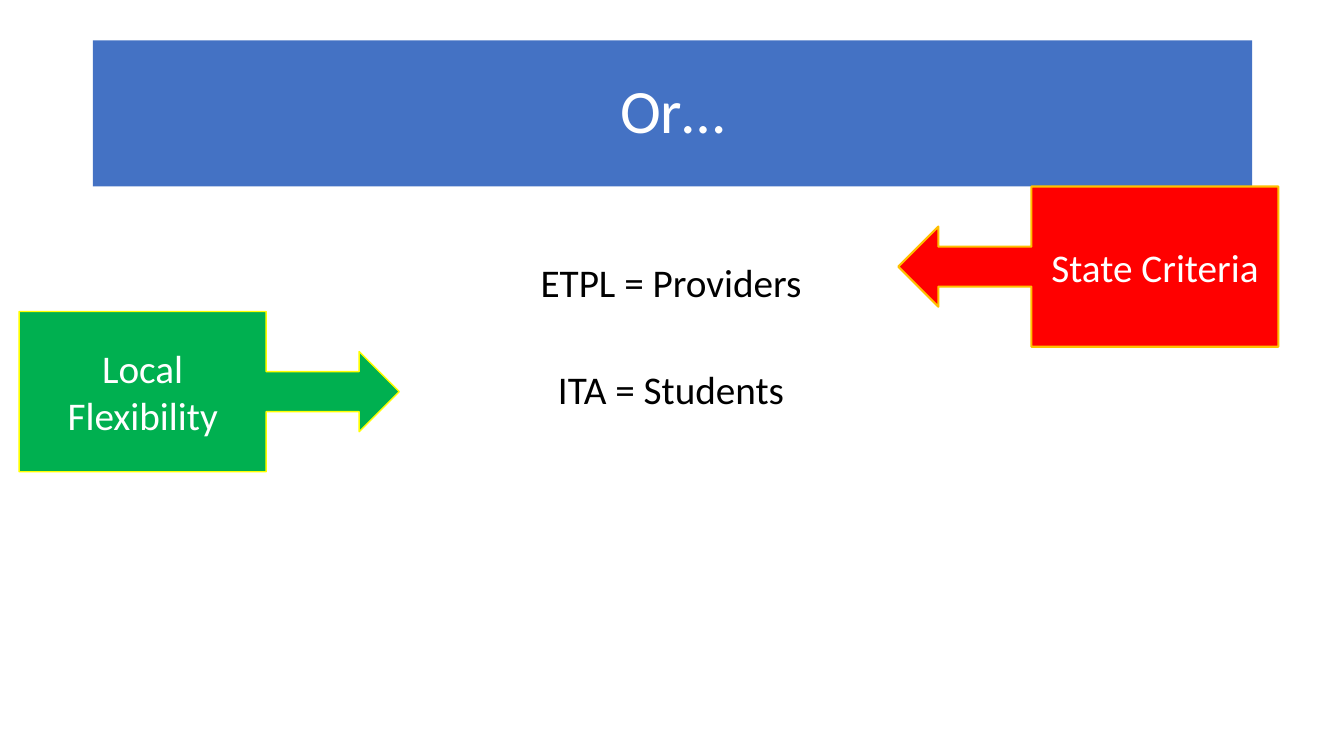
from dataclasses import dataclass

from lxml import etree
from pptx import Presentation
from pptx.dml.color import RGBColor
from pptx.enum.shapes import MSO_SHAPE
from pptx.enum.text import MSO_ANCHOR, MSO_AUTO_SIZE, PP_ALIGN
from pptx.oxml.ns import qn
from pptx.util import Inches, Pt

LEFT_CALLOUT = MSO_SHAPE.LEFT_ARROW_CALLOUT
RIGHT_CALLOUT = MSO_SHAPE.RIGHT_ARROW_CALLOUT
CENTER = PP_ALIGN.CENTER
MIDDLE = MSO_ANCHOR.MIDDLE
TOP = MSO_ANCHOR.TOP
NO_AUTOFIT = MSO_AUTO_SIZE.NONE
TITLE_AND_CONTENT = 1


@dataclass(frozen=True)
class Theme:
    font: str = "Calibri"
    title_size: int = 44
    text_size: int = 28
    white: RGBColor = RGBColor(0xFF, 0xFF, 0xFF)
    black: RGBColor = RGBColor(0x00, 0x00, 0x00)
    blue: RGBColor = RGBColor(0x44, 0x72, 0xC4)
    red: RGBColor = RGBColor(0xFF, 0x00, 0x00)
    amber: RGBColor = RGBColor(0xFF, 0xC0, 0x00)
    green: RGBColor = RGBColor(0x00, 0xB0, 0x50)
    yellow: RGBColor = RGBColor(0xFF, 0xFF, 0x00)


THEME = Theme()


def place(shape, left, top, width, height):
    shape.left, shape.top = Inches(left), Inches(top)
    shape.width, shape.height = Inches(width), Inches(height)


def format_text(frame, size, color, anchor, line_spacing=1.0):
    frame.word_wrap = True
    frame.auto_size = NO_AUTOFIT
    frame.vertical_anchor = anchor
    for para in frame.paragraphs:
        para.alignment = CENTER
        para.line_spacing = line_spacing
        for span in para.runs:
            span.font.name = THEME.font
            span.font.size = Pt(size)
            span.font.color.rgb = color


def remove_bullet(para):
    properties = para._p.get_or_add_pPr()
    properties.set("marL", "0")
    properties.set("indent", "0")
    etree.SubElement(properties, qn("a:buNone"))


def fill_title(title, text):
    place(title, 0.92, 0.4, 11.5, 1.45)
    title.fill.solid()
    title.fill.fore_color.rgb = THEME.blue
    title.text_frame.text = text
    format_text(title.text_frame, THEME.title_size, THEME.white, MIDDLE, 0.9)


def fill_body(body, lines, gap):
    place(body, 1.4, 2.57, 10.51, 3.94)
    frame = body.text_frame
    frame.text = "\n".join(lines)
    format_text(frame, THEME.text_size, THEME.black, TOP, 0.9)
    for index, para in enumerate(frame.paragraphs):
        para.space_before = Pt(gap if index else 10)
        remove_bullet(para)


def add_callout(page, kind, left, top, text, fill, line, line_width):
    callout = page.shapes.add_shape(
        kind, Inches(left), Inches(top), Inches(3.77), Inches(1.59))
    callout.shadow.inherit = False
    callout.fill.solid()
    callout.fill.fore_color.rgb = fill
    callout.line.color.rgb = line
    callout.line.width = Pt(line_width)
    callout.text_frame.text = text
    format_text(callout.text_frame, THEME.text_size, THEME.white, MIDDLE)


def main():
    deck = Presentation()
    deck.slide_width, deck.slide_height = Inches(13.33), Inches(7.5)
    page = deck.slides.add_slide(deck.slide_layouts[TITLE_AND_CONTENT])
    fill_title(page.shapes.title, "Or…")
    fill_body(page.placeholders[1], ["ETPL = Providers", "ITA = Students"], gap=46)
    add_callout(page, LEFT_CALLOUT, 8.91, 1.85, "State Criteria",
                THEME.red, THEME.amber, 1.5)
    add_callout(page, RIGHT_CALLOUT, 0.19, 3.09, "Local Flexibility",
                THEME.green, THEME.yellow, 1)
    deck.save("out.pptx")


if __name__ == "__main__":
    main()
